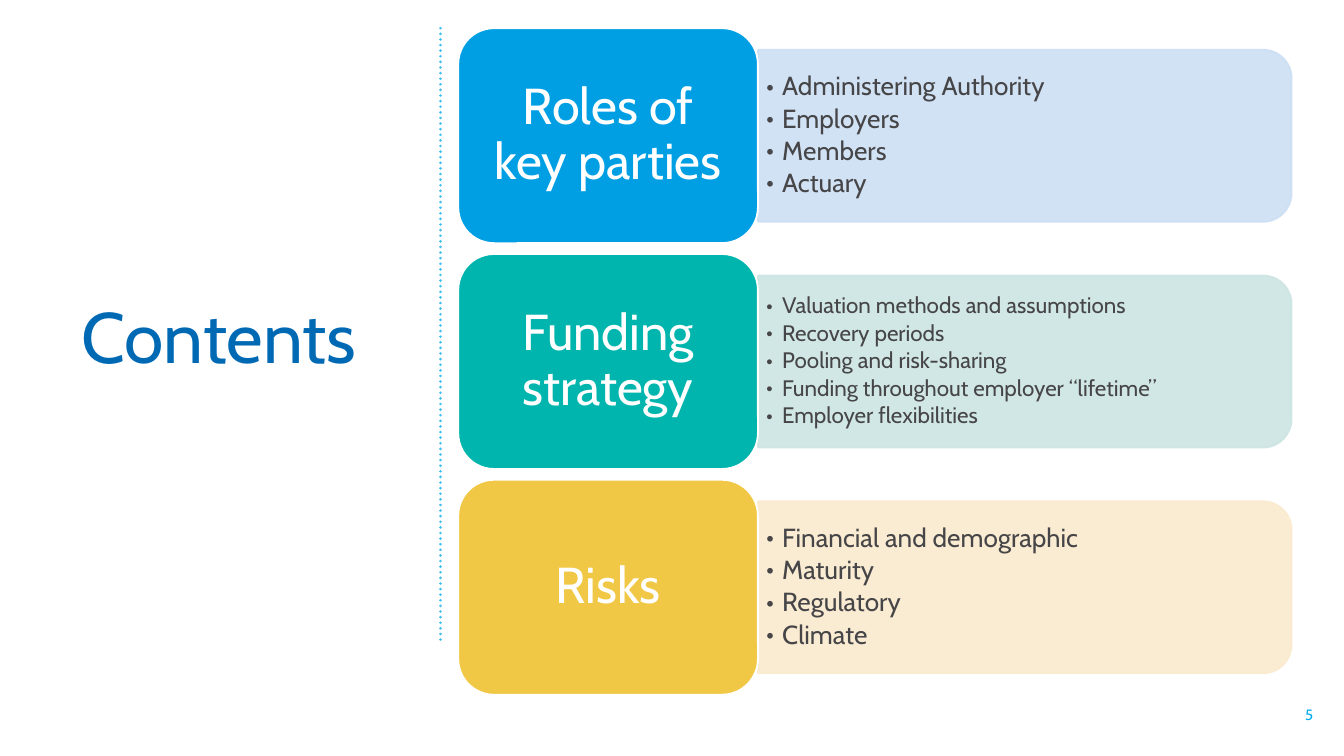
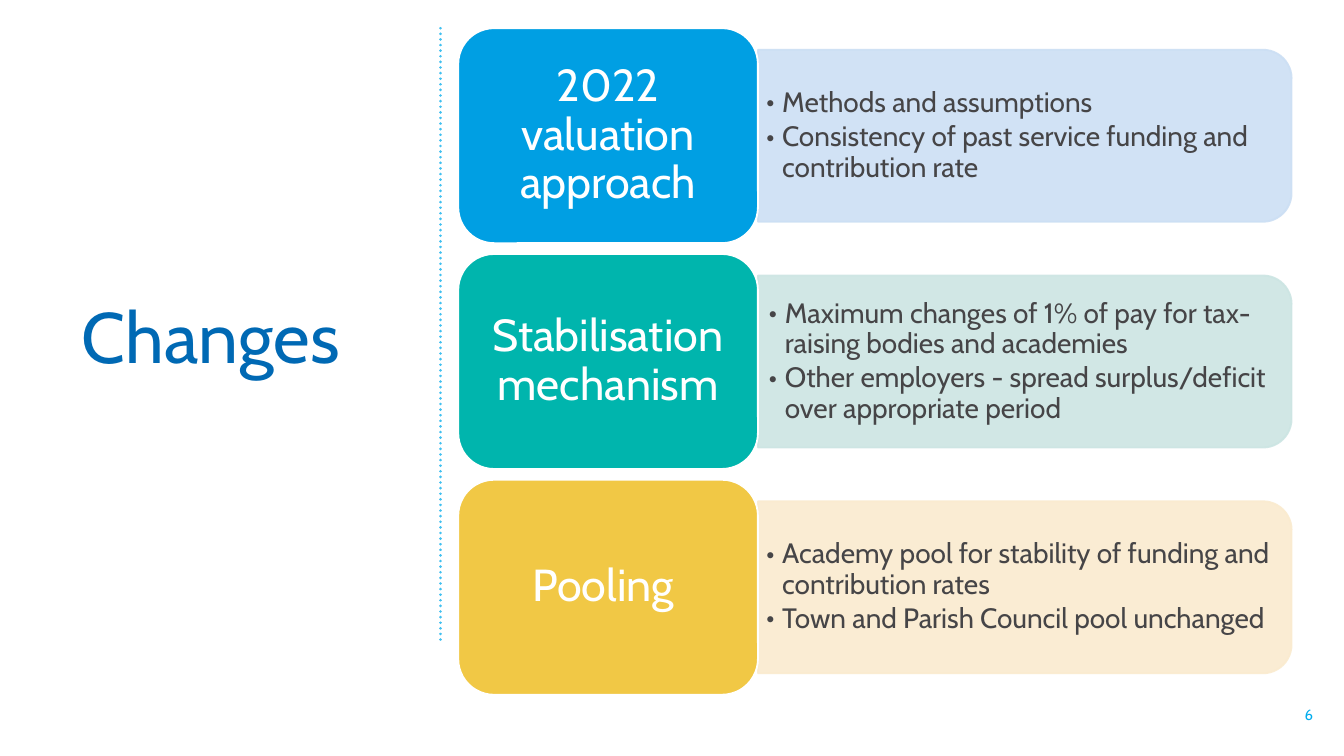
import pptx
import pptx.dml.color
import pptx.enum.dml
import pptx.enum.shapes
import pptx.enum.text
import pptx.oxml.ns
import pptx.util
from lxml import etree

Inches = pptx.util.Inches
Pt = pptx.util.Pt
RGBColor = pptx.dml.color.RGBColor
SHAPE = pptx.enum.shapes.MSO_SHAPE
ALIGN = pptx.enum.text.PP_ALIGN
qn = pptx.oxml.ns.qn

FONT = "Cabin"
WHITE = RGBColor(0xFF, 0xFF, 0xFF)
TITLE_BLUE = RGBColor(0x00, 0x69, 0xB4)
NUMBER_BLUE = RGBColor(0x00, 0xAD, 0xEE)
DIVIDER_BLUE = RGBColor(0x41, 0xC0, 0xF0)
BODY_GREY = RGBColor(0x46, 0x45, 0x47)
# Heading card and panel colour of each row.
ROW_COLORS = [
    (RGBColor(0x00, 0x9F, 0xE3), RGBColor(0xCC, 0xDF, 0xF4)),
    (RGBColor(0x00, 0xB5, 0xAD), RGBColor(0xCC, 0xE5, 0xE3)),
    (RGBColor(0xF1, 0xC8, 0x45), RGBColor(0xFA, 0xEB, 0xCF)),
]

SLIDE_WIDTH = 10
SLIDE_HEIGHT = SLIDE_WIDTH * 9 / 16
TOP = 0.21
CARD_LEFT, CARD_WIDTH, CARD_HEIGHT = 3.41, 2.23, 1.6
ROW_PITCH = 1.68
PANEL_LEFT = CARD_LEFT + CARD_WIDTH
PANEL_WIDTH, PANEL_HEIGHT = 3.97, 1.28
ITEMS_WIDTH, ITEMS_HEIGHT = 3.9, 1.15
BULLET_INDENT = 0.12

# Rows: heading, items, item size, side inset of the items.
SLIDES = [
    {"title": "Contents", "number": 5, "heading_size": 27, "heading_inset": 0.11, "rows": [
        ("Roles of key parties",
         ["Administering Authority", "Employers", "Members", "Actuary"], 14, 0.06),
        ("Funding strategy",
         ["Valuation methods and assumptions", "Recovery periods",
          "Pooling and risk-sharing", "Funding throughout employer “lifetime”",
          "Employer flexibilities"], 12, 0.06),
        ("Risks",
         ["Financial and demographic", "Maturity", "Regulatory", "Climate"], 14, 0.06),
    ]},
    {"title": "Changes", "number": 6, "heading_size": 24, "heading_inset": 0.1, "rows": [
        ("2022 valuation approach",
         ["Methods and assumptions",
          "Consistency of past service funding and contribution rate"], 15, 0.06),
        ("Stabilisation mechanism",
         ["Maximum changes of 1% of pay for tax-raising bodies and academies",
          "Other employers - spread surplus/deficit over appropriate period"], 15, 0.08),
        ("Pooling ",
         ["Academy pool for stability of funding and contribution rates",
          "Town and Parish Council pool unchanged"], 15, 0.06),
    ]},
]


def write_text(shape, lines, size, color, inset, align=ALIGN.LEFT,
               space_after=0, line_spacing=1.0, bullets=False):
    """Fill a shape with vertically centred paragraphs; inset is the side margin."""
    frame = shape.text_frame
    frame.word_wrap = True
    frame.vertical_anchor = pptx.enum.text.MSO_ANCHOR.MIDDLE
    frame.margin_left = frame.margin_right = Inches(inset)
    frame.margin_top = frame.margin_bottom = Inches(inset / 2)
    frame.text = "\n".join(lines)
    for paragraph in frame.paragraphs:
        if bullets:
            add_bullet(paragraph)
        paragraph.alignment = align
        paragraph.line_spacing = line_spacing
        paragraph.space_after = Pt(space_after)
        for font in [paragraph.font] + [run.font for run in paragraph.runs]:
            font.name = FONT
            font.size = Pt(size)
            font.color.rgb = color


def add_bullet(paragraph):
    paragraph.level = 1
    properties = paragraph._p.get_or_add_pPr()
    properties.set("marL", str(Inches(BULLET_INDENT)))
    properties.set("indent", str(-Inches(BULLET_INDENT)))
    etree.SubElement(properties, qn("a:buFont")).set("typeface", FONT)
    etree.SubElement(properties, qn("a:buChar")).set("char", "•")


def add_text_box(slide, left, top, width, height):
    return slide.shapes.add_textbox(
        Inches(left), Inches(top), Inches(width), Inches(height))


def add_filled_shape(slide, kind, left, top, width, height, fill, line):
    shape = slide.shapes.add_shape(
        kind, Inches(left), Inches(top), Inches(width), Inches(height))
    shape.shadow.inherit = False
    shape.fill.solid()
    shape.fill.fore_color.rgb = fill
    shape.line.color.rgb = line
    shape.line.width = Pt(1)
    return shape


def add_panel(slide, middle, color):
    """Add a panel with its rounded end on the right, centred on height middle."""
    panel = add_filled_shape(
        slide, SHAPE.ROUND_2_SAME_RECTANGLE,
        PANEL_LEFT + (PANEL_WIDTH - PANEL_HEIGHT) / 2, middle - PANEL_WIDTH / 2,
        PANEL_HEIGHT, PANEL_WIDTH, color, color)
    panel.rotation = 90
    for color_element in panel._element.spPr.iter(qn("a:srgbClr")):
        etree.SubElement(color_element, qn("a:alpha")).set("val", "90000")


def add_row(slide, index, row, heading_size, heading_inset):
    heading, items, item_size, item_inset = row
    card_color, panel_color = ROW_COLORS[index]
    top = TOP + index * ROW_PITCH
    middle = top + CARD_HEIGHT / 2

    add_panel(slide, middle, panel_color)
    items_box = add_text_box(
        slide, PANEL_LEFT, middle - ITEMS_HEIGHT / 2, ITEMS_WIDTH, ITEMS_HEIGHT)
    write_text(items_box, items, item_size, BODY_GREY, item_inset,
               space_after=item_size * 0.15, line_spacing=0.9, bullets=True)

    card = add_filled_shape(slide, SHAPE.ROUNDED_RECTANGLE, CARD_LEFT, top,
                            CARD_WIDTH, CARD_HEIGHT, card_color, WHITE)
    write_text(card, [heading], heading_size, WHITE, heading_inset, ALIGN.CENTER,
               space_after=heading_size * 0.35, line_spacing=0.9)


def add_divider(slide):
    divider = slide.shapes.add_connector(
        pptx.enum.shapes.MSO_CONNECTOR.STRAIGHT,
        Inches(3.28), Inches(TOP), Inches(3.28), Inches(4.77))
    divider.line.color.rgb = DIVIDER_BLUE
    divider.line.width = Pt(1.5)
    divider.line.dash_style = pptx.enum.dml.MSO_LINE.ROUND_DOT
    properties = divider._element.spPr
    properties.find(qn("a:ln")).set("cap", "rnd")
    etree.SubElement(properties, qn("a:effectLst"))


def add_frame(slide, title, number):
    """Add what every slide shares: divider, title and slide number."""
    add_divider(slide)
    title_box = add_text_box(slide, 0.51, TOP, 2.75, 4.56)
    write_text(title_box, [title], 38.2, TITLE_BLUE, 0.1, space_after=12)
    number_box = add_text_box(slide, 9.27, 5.17, 0.5, 0.3)
    write_text(number_box, [str(number)], 8, NUMBER_BLUE, 0, ALIGN.RIGHT, space_after=6)


def main():
    presentation = pptx.Presentation()
    presentation.slide_width = Inches(SLIDE_WIDTH)
    presentation.slide_height = Inches(SLIDE_HEIGHT)
    for content in SLIDES:
        slide = presentation.slides.add_slide(presentation.slide_layouts[6])
        add_frame(slide, content["title"], content["number"])
        for index, row in enumerate(content["rows"]):
            add_row(slide, index, row, content["heading_size"], content["heading_inset"])
    presentation.save("out.pptx")


if __name__ == "__main__":
    main()
